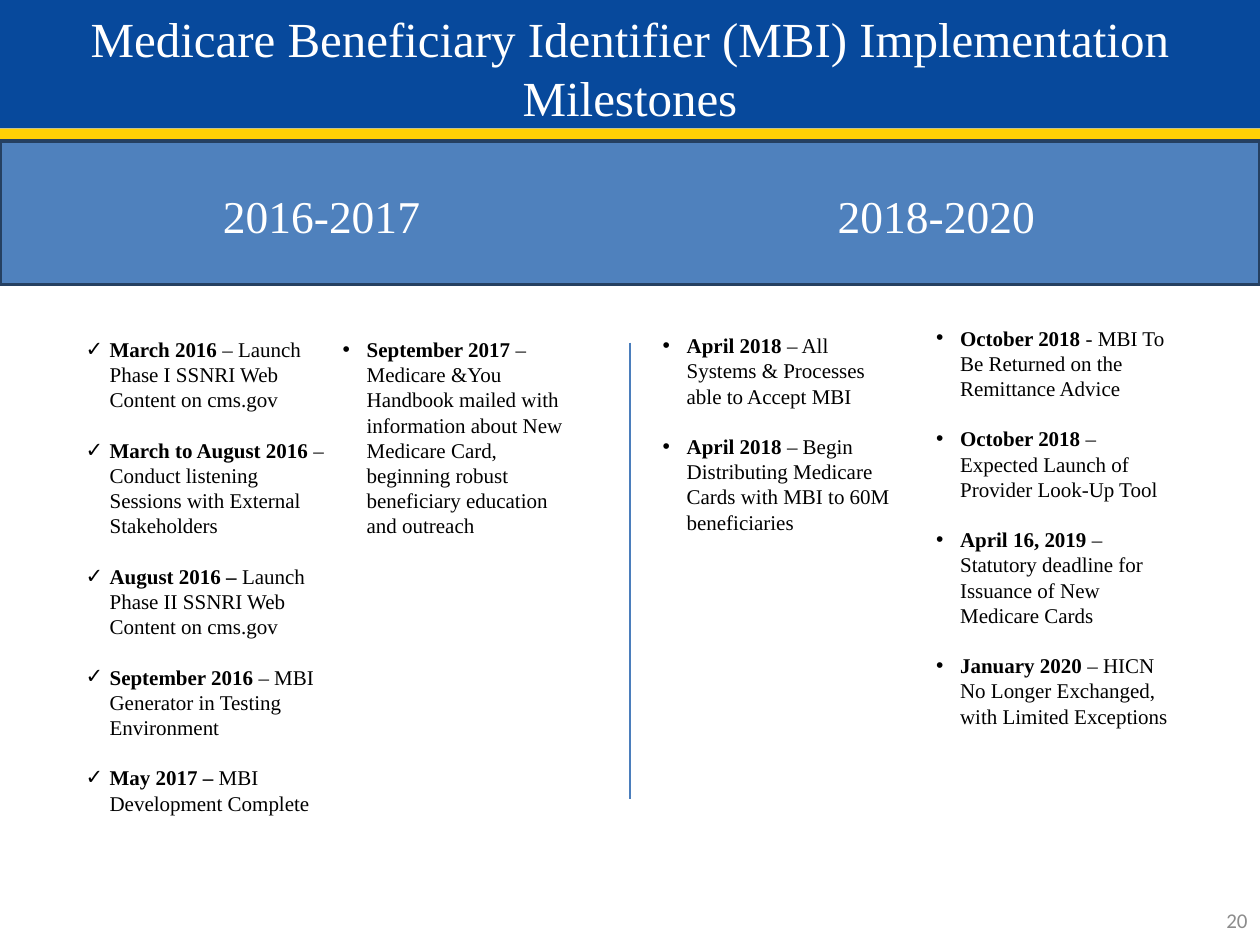
"""Build the MBI implementation milestones slide."""
from lxml.etree import SubElement
from pptx import Presentation
from pptx.dml.color import RGBColor
from pptx.enum.shapes import MSO_CONNECTOR, MSO_SHAPE
from pptx.enum.text import MSO_ANCHOR, MSO_AUTO_SIZE, PP_ALIGN
from pptx.oxml.ns import qn
from pptx.util import Inches, Pt

NAVY = RGBColor(0x07, 0x49, 0x9C)
GOLD = RGBColor(0xFF, 0xD0, 0x04)
BLUE = RGBColor(0x4F, 0x81, 0xBD)
EDGE = RGBColor(0x25, 0x40, 0x61)
RULE = RGBColor(0x4B, 0x7E, 0xBC)
WHITE = RGBColor(0xFF, 0xFF, 0xFF)
BLACK = RGBColor(0x00, 0x00, 0x00)
GREY = RGBColor(0x8C, 0x8C, 0x8C)
SERIF = "Times New Roman"


def place(shape, left, top, width, height):
    shape.left, shape.top = Inches(left), Inches(top)
    shape.width, shape.height = Inches(width), Inches(height)


def write(para, text, size, color, bold=False, face=SERIF):
    run = para.add_run()
    run.text = text
    run.font.name, run.font.size, run.font.bold = face, Pt(size), bold
    run.font.color.rgb = color
    para.line_spacing = Pt(1.2 * size)


deck = Presentation()
deck.slide_width, deck.slide_height = Inches(10), Inches(7.5)
slide = deck.slides.add_slide(deck.slide_layouts.get_by_name("Comparison"))
shapes = slide.shapes

title = shapes.title
bands = [(0, 1.02, NAVY), (1.02, 0.09, GOLD), (1.12, 1.14, BLUE)]
for top, height, color in bands:
    band = shapes.add_shape(MSO_SHAPE.RECTANGLE, 0, Inches(top),
                            Inches(10), Inches(height))
    band.shadow.inherit = False
    band.fill.solid()
    band.fill.fore_color.rgb = color
    if color == BLUE:
        band.line.color.rgb, band.line.width = EDGE, Pt(2)
    else:
        band.line.fill.background()
    title.element.addprevious(band.element)

place(title, 0, 0.06, 10, 0.94)
frame = title.text_frame
frame.margin_left = frame.margin_right = frame.margin_top = frame.margin_bottom = 0
frame.vertical_anchor = MSO_ANCHOR.BOTTOM
frame.auto_size = MSO_AUTO_SIZE.NONE
frame.paragraphs[0].alignment = PP_ALIGN.CENTER
write(frame.paragraphs[0],
      "Medicare Beneficiary Identifier (MBI) Implementation Milestones", 28, WHITE)

for left, years in [(1.67, "2016-2017"), (6.55, "2018-2020")]:
    box = shapes.add_textbox(Inches(left), Inches(1.44), Inches(1.78), Inches(0.54))
    write(box.text_frame.paragraphs[0], years, 26, WHITE)

columns = [
    (0.58, 2.62, 2.11, 4.32, "✓", [
        ("March 2016 ", "– Launch Phase I SSNRI Web Content on cms.gov"),
        ("March to August 2016 ", "– Conduct listening Sessions with External Stakeholders"),
        ("August 2016 – ", "Launch Phase II SSNRI Web Content on cms.gov"),
        ("September 2016 ", "– MBI Generator in Testing Environment"),
        ("May 2017 – ", "MBI Development Complete")]),
    (2.62, 2.62, 2.03, 2.12, "•", [
        ("September 2017 ", "– Medicare &You Handbook mailed with information about "
         "New Medicare Card, beginning robust beneficiary education and outreach")]),
    (5.16, 2.59, 2.02, 2.5, "•", [
        ("April 2018 ", "– All Systems & Processes able to Accept MBI"),
        ("April 2018 ", "– Begin Distributing Medicare Cards with MBI to 60M beneficiaries")]),
    (7.33, 2.53, 2.09, 3.52, "•", [
        ("October 2018 ", "- MBI To Be Returned on the Remittance Advice"),
        ("October 2018 ", "– Expected Launch of Provider Look-Up Tool"),
        ("April 16, 2019 ", "– Statutory deadline for Issuance of New Medicare Cards"),
        ("January 2020 ", "– HICN No Longer Exchanged, with Limited Exceptions")]),
]
for num, (left, top, width, height, mark, items) in enumerate(columns, 1):
    body = slide.placeholders[num]
    place(body, left, top, width, height)
    frame = body.text_frame
    frame.vertical_anchor = MSO_ANCHOR.TOP
    frame.auto_size = MSO_AUTO_SIZE.NONE
    for pos, (date, event) in enumerate(items):
        para = frame.add_paragraph() if pos else frame.paragraphs[0]
        write(para, date, 12, BLACK, True)
        write(para, event, 12, BLACK)
        para.space_before = Pt(14.4 if pos else 0)
        props = para._p.get_or_add_pPr()
        props.set("marL", str(Inches(0.19)))
        props.set("indent", str(-Inches(0.19)))
        SubElement(props, qn("a:buFont"), typeface="Arial")
        SubElement(props, qn("a:buChar"), char=mark)

rule = shapes.add_connector(MSO_CONNECTOR.STRAIGHT, Inches(5), Inches(2.72),
                            Inches(5), Inches(6.34))
rule.line.color.rgb, rule.line.width = RULE, Pt(0.75)
SubElement(rule.element.spPr, qn("a:effectLst"))

page = shapes.add_textbox(Inches(7.67), Inches(7.1), Inches(2.33), Inches(0.4))
page.text_frame.word_wrap = True
page.text_frame.vertical_anchor = MSO_ANCHOR.MIDDLE
page.text_frame.paragraphs[0].alignment = PP_ALIGN.RIGHT
write(page.text_frame.paragraphs[0], "20", 12, GREY, face="Calibri")

deck.save("out.pptx")
